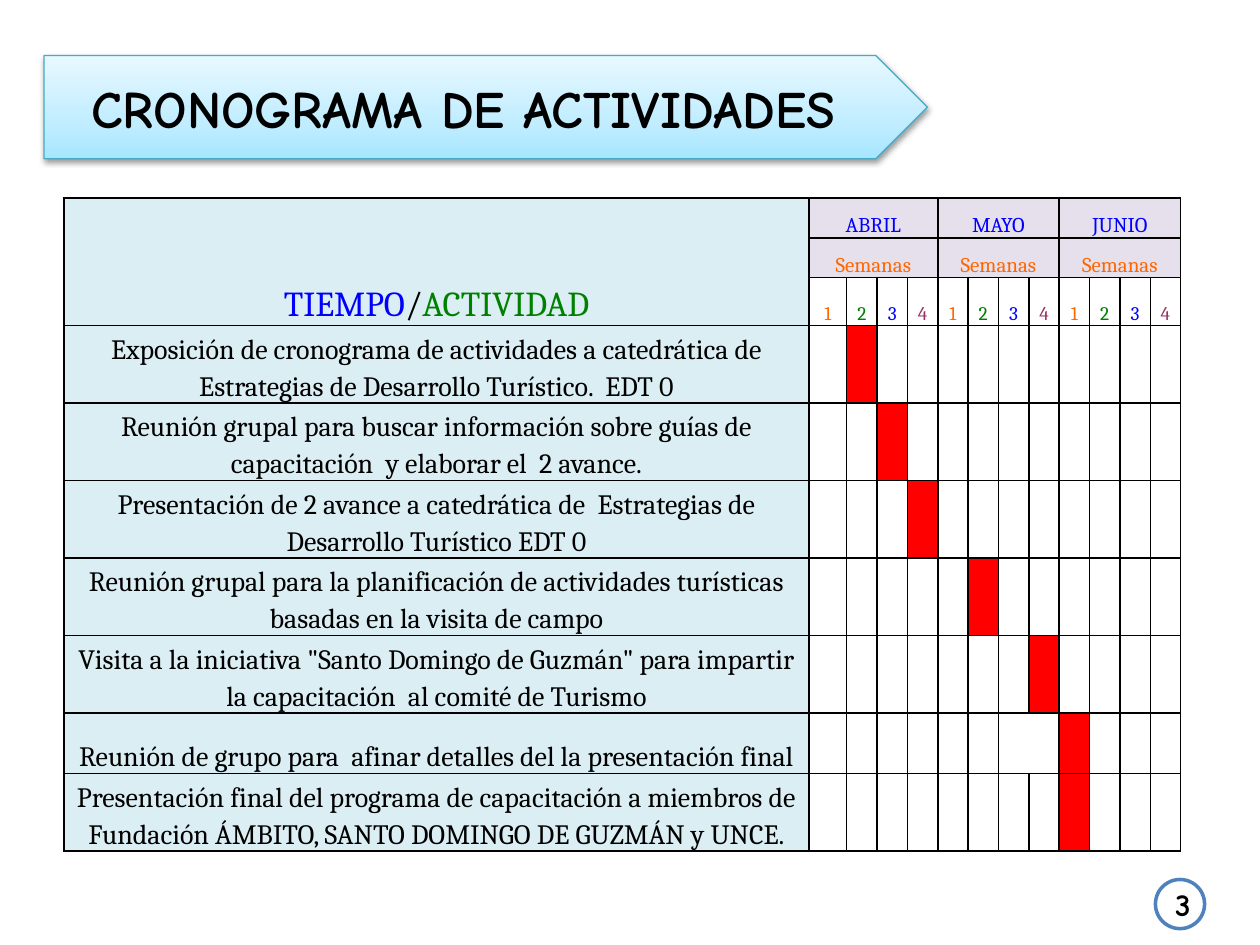
from copy import deepcopy

from lxml.etree import SubElement
from pptx import Presentation
from pptx.dml.color import RGBColor
from pptx.enum.shapes import MSO_SHAPE
from pptx.enum.text import MSO_ANCHOR, PP_ALIGN
from pptx.oxml import parse_xml
from pptx.oxml.ns import nsdecls, qn
from pptx.util import Inches, Pt

BLACK = RGBColor(0x00, 0x00, 0x00)
WHITE = RGBColor(0xFF, 0xFF, 0xFF)
BLUE = RGBColor(0x00, 0x00, 0xFF)
GREEN = RGBColor(0x00, 0x80, 0x00)
ORANGE = RGBColor(0xFF, 0x66, 0x00)
PLUM = RGBColor(0x99, 0x33, 0x66)
RED = RGBColor(0xFF, 0x00, 0x00)
PALE_BLUE = RGBColor(0xDB, 0xEE, 0xF4)
LILAC = RGBColor(0xE6, 0xE0, 0xEC)
TEAL = RGBColor(0x46, 0xAA, 0xC5)
RING = RGBColor(0x4F, 0x81, 0xBD)
BANNER = [(0, RGBColor(0xA7, 0xE6, 0xFF)), (0.35, RGBColor(0xC1, 0xED, 0xFF)),
          (1, RGBColor(0xE7, 0xF8, 0xFF))]

HEADING, BODY = "Comic Neue", "Cambria"
MONTHS = ["ABRIL", "MAYO", "JUNIO"]
WEEK_COLORS = [ORANGE, GREEN, BLUE, PLUM]
WEEKS = len(WEEK_COLORS)
HEAD_ROWS = 3
# Activity and the column of its week
ACTIVITIES = [
    ("Exposición de cronograma de actividades a catedrática de Estrategias de "
     "Desarrollo Turístico.  EDT 0", 2),
    ("Reunión grupal para buscar información sobre guías de capacitación  y "
     "elaborar el  2 avance.", 3),
    ("Presentación de 2 avance a catedrática de  Estrategias de Desarrollo "
     "Turístico EDT 0", 4),
    ("Reunión grupal para la planificación de actividades turísticas basadas "
     "en la visita de campo", 6),
    ('Visita a la iniciativa "Santo Domingo de Guzmán" para impartir la '
     "capacitación  al comité de Turismo", 8),
    ("Reunión de grupo para  afinar detalles del la presentación final", 9),
    ("Presentación final del programa de capacitación a miembros de Fundación "
     "ÁMBITO, SANTO DOMINGO DE GUZMÁN y UNCE.", 9),
]
# Sides left open where two week cells run together: (row, column) -> side
OPEN_SIDES = {(8, 7): "R", (8, 8): "L"}


def write(p, text, size=16, font=BODY, color=BLACK, bold=False):
    """Add a formatted, centred run to a paragraph."""
    p.alignment = PP_ALIGN.CENTER
    r = p.add_run()
    r.text = text
    r.font.size, r.font.name, r.font.bold = Pt(size), font, bold
    r.font.color.rgb = color


class Deck:
    """Slide on a grid of 100 columns by 75 rows."""

    def __init__(self):
        self.prs = Presentation()
        self.prs.slide_width, self.prs.slide_height = Inches(10), Inches(7.5)
        self.s = self.prs.slides.add_slide(self.prs.slide_layouts[6])

    def col(self, n):
        return round(self.prs.slide_width * n / 100)

    def row(self, n):
        return round(self.prs.slide_height * n / 75)

    def box(self, x, y, w, h):
        return self.col(x), self.row(y), self.col(w), self.row(h)

    def shape(self, kind, place, text, size, line, width):
        sp = self.s.shapes.add_shape(kind, *self.box(*place))
        sp.shadow.inherit = False
        sp.fill.solid()
        sp.fill.fore_color.rgb = WHITE
        sp.line.color.rgb, sp.line.width = line, Pt(width)
        tf = sp.text_frame
        tf.vertical_anchor = MSO_ANCHOR.MIDDLE
        write(tf.paragraphs[0], text, size, HEADING, bold=True)
        return sp

    def banner(self, place, text):
        sp = self.shape(MSO_SHAPE.PENTAGON, place, text, 30, TEAL, 0.75)
        # Three-stop gradient, dark at the bottom
        sp.fill.gradient()
        sp.fill.gradient_angle = 90
        stops = sp._element.spPr.find(qn("a:gradFill")).find(qn("a:gsLst"))
        stops.append(deepcopy(stops[-1]))
        for stop, (position, color) in zip(sp.fill.gradient_stops, BANNER):
            stop.position, stop.color.rgb = position, color
        # Soft shadow below
        effects = sp._element.spPr.find(qn("a:effectLst"))
        effects.append(parse_xml(
            f'<a:outerShdw {nsdecls("a")} blurRad="{Pt(3.1)}" dist="{Pt(1.6)}" '
            'dir="5400000" rotWithShape="0"><a:srgbClr val="000000">'
            '<a:alpha val="38000"/></a:srgbClr></a:outerShdw>'))

    def table(self, place, widths, heights):
        frame = self.s.shapes.add_table(len(heights), len(widths), *self.box(*place))
        t = frame.table
        t.first_row = t.horz_banding = False
        for column, width in zip(t.columns, widths):
            column.width = self.col(width)
        for line, height in zip(t.rows, heights):
            line.height = self.row(height)
        for r in range(len(heights)):
            for c in range(len(widths)):
                self.border(t.cell(r, c), OPEN_SIDES.get((r, c)))
        return t

    def border(self, cell, open_side):
        tcPr = cell._tc.get_or_add_tcPr()
        for side in "LRTB":
            ln = SubElement(tcPr, qn(f"a:ln{side}"), w=str(Pt(1)))
            if side == open_side:
                SubElement(ln, qn("a:noFill"))
            else:
                fill = SubElement(ln, qn("a:solidFill"))
                SubElement(fill, qn("a:srgbClr"), val=str(BLACK))
        cell.fill.background()

    def cell(self, cell, runs=(), fill=None, **style):
        """Fill a cell; runs are (text, color) pairs."""
        if fill is not None:
            cell.fill.solid()
            cell.fill.fore_color.rgb = fill
        cell.vertical_anchor = MSO_ANCHOR.BOTTOM
        cell.margin_left = cell.margin_right = Inches(0.05)
        cell.margin_top = cell.margin_bottom = 0
        p = cell.text_frame.paragraphs[0]
        p.line_spacing = 1.15
        for text, color in runs:
            write(p, text, color=color, **style)


def fill_schedule(deck, t):
    # Corner heading
    t.cell(0, 0).merge(t.cell(HEAD_ROWS - 1, 0))
    deck.cell(t.cell(0, 0), [("TIEMPO", BLUE), ("/", BLACK), ("ACTIVIDAD", GREEN)],
              PALE_BLUE, size=20)
    # Months and their weeks
    for m, month in enumerate(MONTHS):
        first = 1 + m * WEEKS
        for r, (text, color) in enumerate([(month, BLUE), ("Semanas", ORANGE)]):
            t.cell(r, first).merge(t.cell(r, first + WEEKS - 1))
            deck.cell(t.cell(r, first), [(text, color)], LILAC, size=12)
        for w, color in enumerate(WEEK_COLORS):
            deck.cell(t.cell(2, first + w), [(str(w + 1), color)], size=11)
    # Activities with the planned week in red
    for r, (activity, week) in enumerate(ACTIVITIES, HEAD_ROWS):
        deck.cell(t.cell(r, 0), [(activity, BLACK)], PALE_BLUE)
        for c in range(1, len(t.columns)):
            deck.cell(t.cell(r, c), fill=RED if c == week else None)


def main():
    deck = Deck()
    deck.banner((3.5, 4.4, 70.1, 8.2), "CRONOGRAMA DE ACTIVIDADES ")
    # Page number
    deck.shape(MSO_SHAPE.OVAL, (91.7, 69.8, 3.9, 3.9), "3", 18, RING, 2)
    # Schedule
    widths = [59.1, 3] + [2.41] * (len(MONTHS) * WEEKS - 1)
    heights = [3.17, 3.17, 3.8] + [6.15] * 5 + [4.8, 6.15]
    t = deck.table((5.1, 15.7, sum(widths), sum(heights)), widths, heights)
    fill_schedule(deck, t)
    deck.prs.save("out.pptx")


if __name__ == "__main__":
    main()
